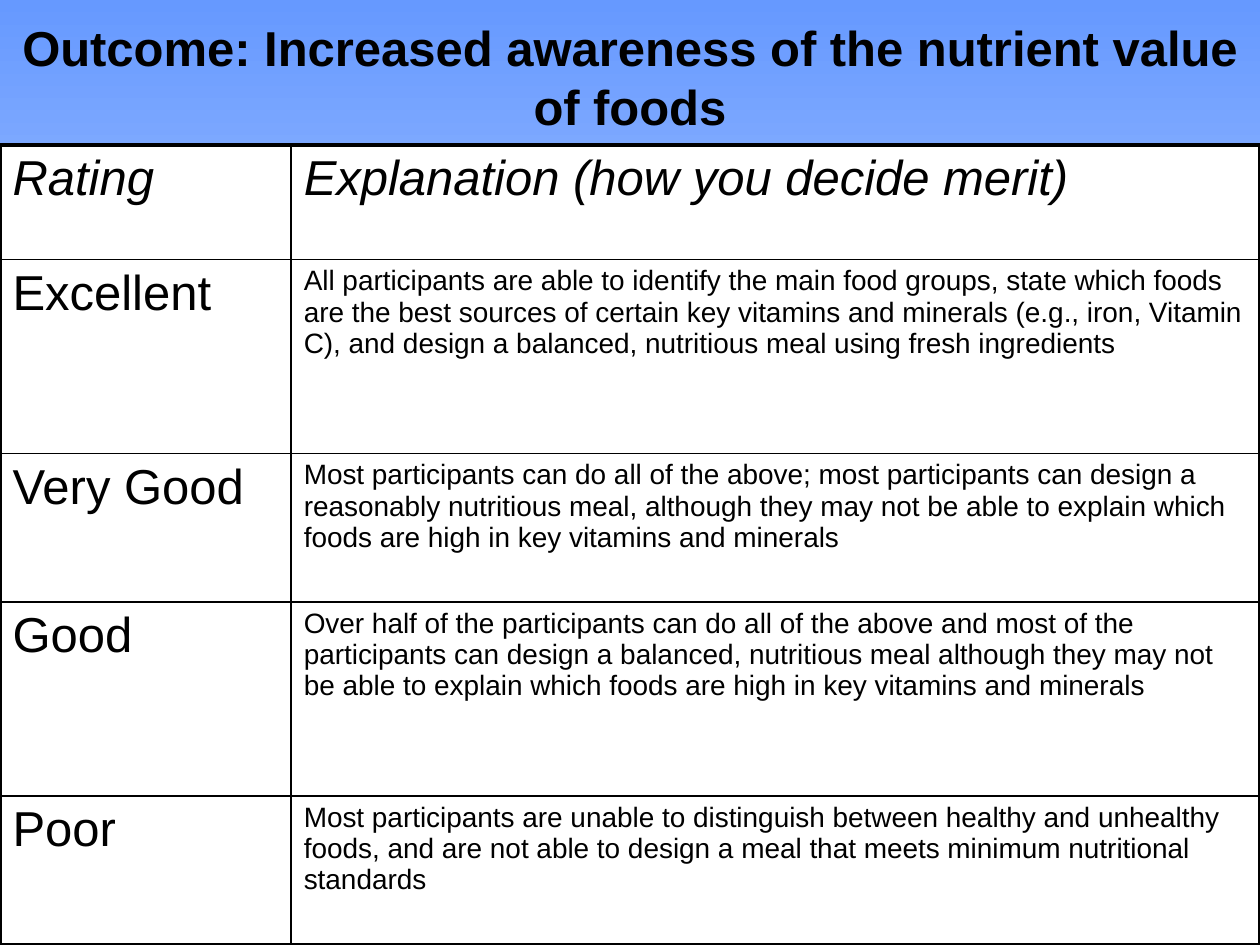
from dataclasses import dataclass

from lxml import etree
from pptx import Presentation
from pptx.dml.color import RGBColor
from pptx.enum.text import MSO_ANCHOR, MSO_AUTO_SIZE, PP_ALIGN
from pptx.oxml.ns import qn
from pptx.util import Cm, Pt

CENTER = PP_ALIGN.CENTER
MIDDLE = MSO_ANCHOR.MIDDLE
NO_AUTOFIT = MSO_AUTO_SIZE.NONE
TITLE_ONLY = 5


@dataclass(frozen=True)
class Theme:
    """Colours, type sizes and line widths of the slide."""

    font: str = "Arial"
    ink: str = "000000"
    paper: str = "FFFFFF"
    sky: str = "6699FF"
    heading: float = 28
    body: float = 16
    frame_line: float = 2.25
    grid_line: float = 1


THEME = Theme()
TITLE = "Outcome: Increased awareness of the nutrient value of foods"
RUBRIC = [
    ("Rating", "Explanation (how you decide merit)"),
    ("Excellent", "All participants are able to identify the main food groups, state which "
     "foods are the best sources of certain key vitamins and minerals (e.g., iron, Vitamin C), "
     "and design a balanced, nutritious meal using fresh ingredients"),
    ("Very Good", "Most participants can do all of the above; most participants can design a "
     "reasonably nutritious meal, although they may not be able to explain which foods are high "
     "in key vitamins and minerals"),
    ("Good", "Over half of the participants can do all of the above and most of the participants "
     "can design a balanced, nutritious meal although they may not be able to explain which "
     "foods are high in key vitamins and minerals"),
    ("Poor", "Most participants are unable to distinguish between healthy and unhealthy foods, "
     "and are not able to design a meal that meets minimum nutritional standards"),
]
COLUMN_WIDTHS = [5.87, 19.53]
ROW_HEIGHTS = [2.31, 3.91, 3, 3.91, 3]


def format_runs(text_frame, size, bold=False, italic=False):
    """Apply the theme font to every run of a text frame."""
    for paragraph in text_frame.paragraphs:
        for run in paragraph.runs:
            run.font.name = THEME.font
            run.font.size = Pt(size)
            run.font.bold = bold
            run.font.italic = italic
            run.font.color.rgb = RGBColor.from_string(THEME.ink)


def paint_background(slide):
    """Fill the slide with a gradient running from top to bottom."""
    fill = slide.background.fill
    fill.gradient()
    fill.gradient_angle = 270
    for stop, color, position in zip(fill.gradient_stops, (THEME.sky, THEME.paper), (0, 1)):
        stop.color.rgb = RGBColor.from_string(color)
        stop.position = position


def add_title(slide):
    """Place and format the title placeholder."""
    title = slide.shapes.title
    title.left, title.top, title.width, title.height = Cm(0), Cm(0.76), Cm(25.4), Cm(1.55)
    text_frame = title.text_frame
    text_frame.text = TITLE
    text_frame.word_wrap = True
    text_frame.auto_size = NO_AUTOFIT
    text_frame.vertical_anchor = MIDDLE
    text_frame.paragraphs[0].alignment = CENTER
    format_runs(text_frame, THEME.heading, bold=True)


def set_borders(cell, outer_sides):
    """Draw the four cell borders, heavier on the outer sides."""
    properties = cell._tc.get_or_add_tcPr()
    for index, side in enumerate("LRTB"):
        width = THEME.frame_line if side in outer_sides else THEME.grid_line
        line = etree.Element(qn(f"a:ln{side}"), w=str(Pt(width)))
        fill = etree.SubElement(line, qn("a:solidFill"))
        etree.SubElement(fill, qn("a:srgbClr"), val=THEME.ink)
        properties.insert(index, line)


def add_rubric(slide):
    """Add the table of ratings and their explanations."""
    last_row, last_column = len(ROW_HEIGHTS) - 1, len(COLUMN_WIDTHS) - 1
    table = slide.shapes.add_table(
        len(ROW_HEIGHTS), len(COLUMN_WIDTHS), Cm(0), Cm(2.92),
        Cm(sum(COLUMN_WIDTHS)), Cm(sum(ROW_HEIGHTS)),
    ).table
    table.horz_banding = False
    for column, width in zip(table.columns, COLUMN_WIDTHS):
        column.width = Cm(width)
    for row_index, texts in enumerate(RUBRIC):
        table.rows[row_index].height = Cm(ROW_HEIGHTS[row_index])
        is_header = row_index == 0
        for column_index, text in enumerate(texts):
            cell = table.cell(row_index, column_index)
            cell.text_frame.text = text
            size = THEME.heading if is_header or column_index == 0 else THEME.body
            format_runs(cell.text_frame, size, italic=is_header)
            cell.fill.solid()
            cell.fill.fore_color.rgb = RGBColor.from_string(THEME.paper)
            edges = {"L": column_index == 0, "R": column_index == last_column,
                     "T": is_header, "B": row_index == last_row}
            set_borders(cell, [side for side, is_outer in edges.items() if is_outer])


def main():
    """Build and save the presentation."""
    presentation = Presentation()
    presentation.slide_width, presentation.slide_height = Cm(25.4), Cm(19.05)
    slide = presentation.slides.add_slide(presentation.slide_layouts[TITLE_ONLY])
    paint_background(slide)
    add_title(slide)
    add_rubric(slide)
    presentation.save("out.pptx")


if __name__ == "__main__":
    main()
